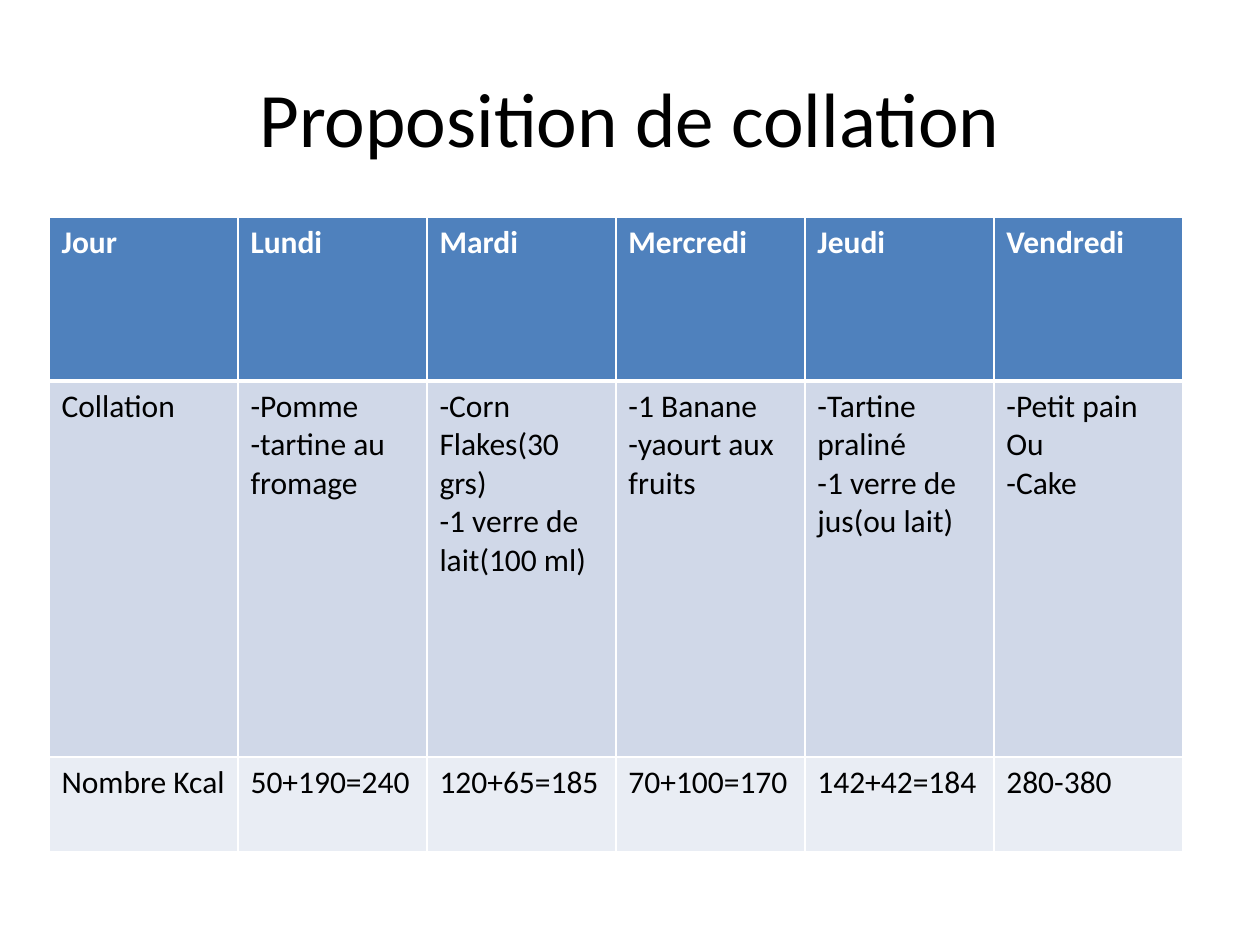
from lxml.etree import SubElement
from pptx import Presentation
from pptx.dml.color import RGBColor
from pptx.enum.text import MSO_ANCHOR, PP_ALIGN
from pptx.oxml.ns import qn
from pptx.util import Pt

PX = 914400 // 126
FONT = "Calibri"
COLORS = {"header": "4F81BD", "meal": "D0D8E8", "kcal": "E9EDF4",
          "white": "FFFFFF", "black": "000000"}
COL_W = 189
ROWS = [
    ("header", 164, ["Jour", "Lundi", "Mardi", "Mercredi", "Jeudi", "Vendredi"]),
    ("meal", 376, ["Collation",
                   "-Pomme\n-tartine au fromage",
                   "-Corn Flakes(30 grs)\n-1 verre de lait(100 ml)",
                   "-1 Banane\n-yaourt aux fruits",
                   "-Tartine praliné\n-1 verre de jus(ou lait)",
                   "-Petit pain\nOu\n-Cake"]),
    ("kcal", 95, ["Nombre Kcal", "50+190=240", "120+65=185", "70+100=170",
                  "142+42=184", "280-380"]),
]


def add_run(p, text, size, color, bold=False):
    r = p.add_run()
    r.text = text
    r.font.name = FONT
    r.font.size = Pt(size)
    r.font.bold = bold
    r.font.color.rgb = RGBColor.from_string(COLORS[color])


def add_border(cell, side, width):
    """Draw one white edge; call before the cell is filled, as the schema wants."""
    ln = SubElement(cell._tc.get_or_add_tcPr(), qn(f"a:ln{side}"), w=str(Pt(width)))
    fill = SubElement(ln, qn("a:solidFill"))
    SubElement(fill, qn("a:srgbClr"), val=COLORS["white"])


prs = Presentation()
prs.slide_width = 1260 * PX
prs.slide_height = 945 * PX
s = prs.slides.add_slide(prs.slide_layouts[5])

title = s.shapes.title
title.left, title.top, title.width, title.height = 63 * PX, 38 * PX, 1134 * PX, 157 * PX
tf = title.text_frame
tf.vertical_anchor = MSO_ANCHOR.MIDDLE
p = tf.paragraphs[0]
p.alignment = PP_ALIGN.CENTER
add_run(p, "Proposition de collation", 44, "black")

n_cols = len(ROWS[0][2])
height = sum(h for _, h, _ in ROWS)
table = s.shapes.add_table(len(ROWS), n_cols, 49 * PX, 217 * PX,
                           n_cols * COL_W * PX, height * PX).table
for col in table.columns:
    col.width = COL_W * PX

for i, (kind, row_h, texts) in enumerate(ROWS):
    table.rows[i].height = row_h * PX
    is_header = kind == "header"
    for j, text in enumerate(texts):
        cell = table.cell(i, j)
        for side in "LRTB":
            thick = (is_header and side == "B") or (i == 1 and side == "T")
            add_border(cell, side, 3 if thick else 1)
        cell.fill.solid()
        cell.fill.fore_color.rgb = RGBColor.from_string(COLORS[kind])
        tf = cell.text_frame
        for k, line in enumerate(text.split("\n")):
            p = tf.add_paragraph() if k else tf.paragraphs[0]
            add_run(p, line, 18, "white" if is_header else "black", is_header)

prs.save("out.pptx")
